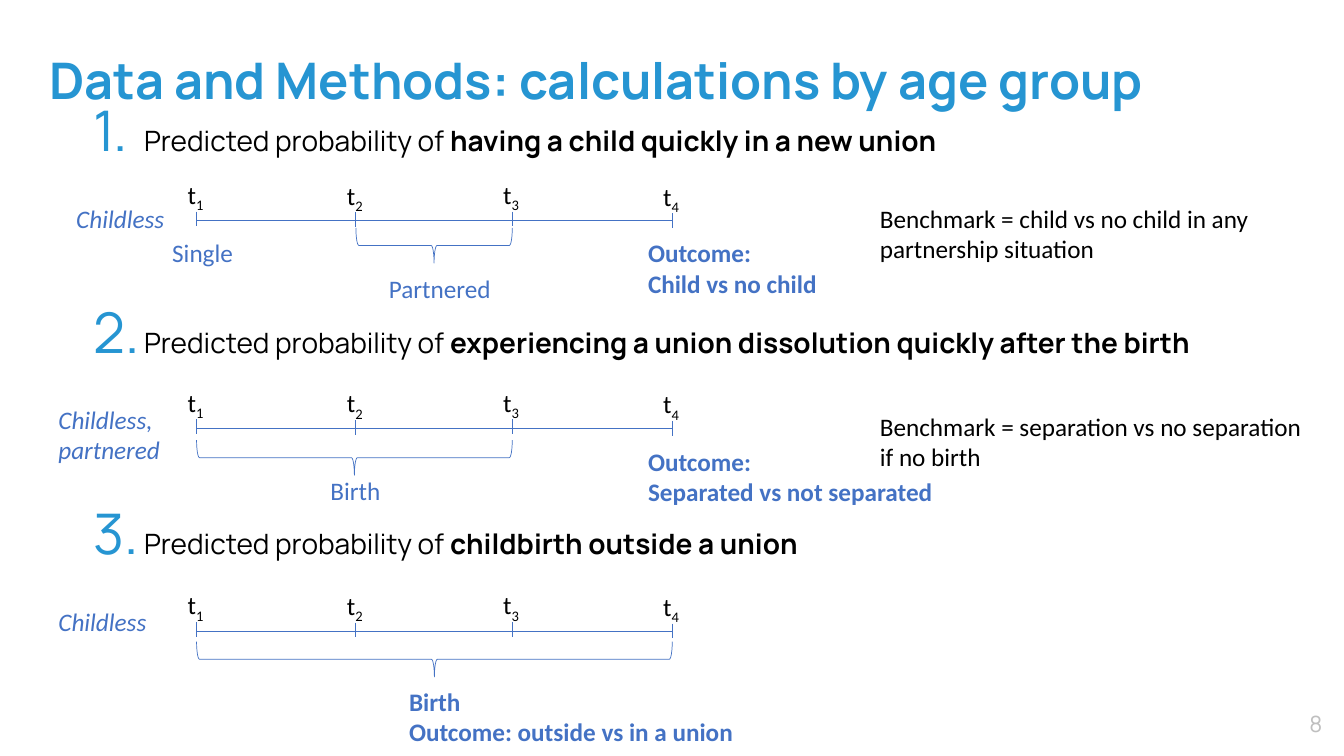
from dataclasses import dataclass

from lxml import etree
from pptx import Presentation
from pptx.dml.color import RGBColor
from pptx.enum import shapes, text
from pptx.oxml import ns
from pptx.util import Pt

SKY = RGBColor(0x26, 0x95, 0xD2)
BLUE = RGBColor(0x44, 0x72, 0xC4)
BLACK = RGBColor(0, 0, 0)
GREY = RGBColor(0xBF, 0xBF, 0xBF)

AXIS_LEFT = 140.4
TICKS = [(0, 0), (113.8, 0.5), (225.5, 0), (339.8, 1.2)]
BRACE_DEPTH = 25.2
HEADING_TOP, HEADING_PITCH = 84.4, 144.2


@dataclass
class Label:
    words: str
    left: float
    top: float
    width: float
    color: RGBColor = BLUE
    bold: bool = False
    italic: bool = False


@dataclass
class Scenario:
    topic: str
    axis: float
    brace: tuple
    labels: list


SCENARIOS = [
    Scenario("having a child quickly in a new union", 157.7, (1, 2, 17.6), [
        Label("Childless", -93, -16, 79.2, italic=True),
        Label("Single", -24.5, 8, 58.3),
        Label("Partnered", 130.3, 33.8, 87.8),
        Label("Outcome:\nChild vs no child", 315.4, 8.6, 136, bold=True),
        Label("Benchmark = child vs no child in any\npartnership situation",
              481, -16, 285, BLACK),
    ]),
    Scenario("experiencing a union dissolution quickly after the birth", 306, (0, 2, 20.9), [
        Label("Childless,\npartnered", -105.8, -20.9, 87.8, italic=True),
        Label("Birth", 88.6, 30.2, 50.4),
        Label("Outcome:\nSeparated vs not separated", 315.4, 9.4, 219.6, bold=True),
        Label("Benchmark = separation vs no separation\nif no birth",
              481, -16, 323.3, BLACK),
    ]),
    Scenario("childbirth outside a union", 450.7, (0, 3, 20.2), [
        Label("Childless", -105.8, -20.9, 77.8, italic=True),
        Label("Birth\nOutcome: outside vs in a union", 144.7, 36, 247.7, bold=True),
    ]),
]


def set_font(para, name, size, color):
    para.font.name = name
    para.font.size = Pt(size)
    para.font.color.rgb = color


def draw_line(page, x1, y1, x2, y2):
    line = page.shapes.add_connector(
        shapes.MSO_CONNECTOR.STRAIGHT, Pt(x1), Pt(y1), Pt(x2), Pt(y2))
    line.line.color.rgb = BLUE
    line.line.width = Pt(0.5)
    etree.SubElement(line._element.spPr, ns.qn("a:effectLst"))


def add_label_box(page, left, top, width, height):
    box = page.shapes.add_textbox(Pt(left), Pt(top), Pt(width), Pt(height))
    box.text_frame.word_wrap = False
    box.text_frame.auto_size = text.MSO_AUTO_SIZE.SHAPE_TO_FIT_TEXT
    return box


def draw_label(page, left, top, label):
    height = 28.8 + 22.3 * label.words.count("\n")
    box = add_label_box(page, left + label.left, top + label.top, label.width, height)
    box.text_frame.text = label.words
    for para in box.text_frame.paragraphs:
        set_font(para, "Calibri", 18, label.color)
        para.font.bold = label.bold
        para.font.italic = label.italic


def draw_time_mark(page, x, y, number):
    draw_line(page, x, y - 6.5, x, y + 4)
    box = add_label_box(page, x - 13.5, y - 33.1, 26.6, 28.8)
    para = box.text_frame.paragraphs[0]
    para.add_run().text = "t"
    subscript = para.add_run()
    subscript.text = str(number)
    subscript._r.get_or_add_rPr().set("baseline", "-25000")
    set_font(para, "Calibri", 18, BLACK)


def draw_brace(page, left, top, first, last, drop):
    start, end = TICKS[first][0], TICKS[last][0]
    length = end - start
    brace = page.shapes.add_shape(
        shapes.MSO_SHAPE.LEFT_BRACE,
        Pt(left + (start + end - BRACE_DEPTH) / 2), Pt(top + drop - length / 2),
        Pt(BRACE_DEPTH), Pt(length))
    brace.rotation = 270
    brace.shadow.inherit = False
    brace.fill.background()
    brace.line.color.rgb = BLUE
    brace.line.width = Pt(0.5)


def draw_timeline(page, left, top, scenario):
    draw_line(page, left, top, left + TICKS[-1][0], top)
    for number, (offset, drop) in enumerate(TICKS, 1):
        draw_time_mark(page, left + offset, top + drop, number)
    draw_brace(page, left, top, *scenario.brace)
    for label in scenario.labels:
        draw_label(page, left, top, label)


def draw_heading(page, left, top, number, topic):
    box = page.shapes.add_textbox(Pt(left), Pt(top), Pt(864), Pt(34.5))
    box.text_frame.word_wrap = True
    para = box.text_frame.paragraphs[0]
    properties = para._p.get_or_add_pPr()
    properties.set("marL", str(Pt(36)))
    properties.set("indent", str(Pt(-36)))
    color = etree.SubElement(properties, ns.qn("a:buClr"))
    etree.SubElement(color, ns.qn("a:srgbClr"), val=str(SKY))
    etree.SubElement(properties, ns.qn("a:buSzPct"), val="200000")
    etree.SubElement(properties, ns.qn("a:buFont"), typeface="+mj-lt")
    etree.SubElement(properties, ns.qn("a:buAutoNum"),
                     type="arabicPeriod", startAt=str(number))
    set_font(para, "Manrope", 20, BLACK)
    para.add_run().text = "Predicted probability of "
    span = para.add_run()
    span.text = topic
    span.font.bold = True


def draw_title(page, left, top, width, height):
    title = page.shapes.title
    title.left, title.top, title.width, title.height = map(Pt, (left, top, width, height))
    title.text_frame.text = "Data and Methods: calculations by age group"
    title.text_frame.vertical_anchor = text.MSO_ANCHOR.MIDDLE
    para = title.text_frame.paragraphs[0]
    para.alignment = text.PP_ALIGN.LEFT
    para.line_spacing = 0.9
    set_font(para, "Manrope", 36, SKY)
    para.font.bold = True


def draw_page_number(page, left, top, width, height):
    table = page.shapes.add_table(1, 1, Pt(left), Pt(top), Pt(width), Pt(height)).table
    table.first_row = table.horz_banding = False
    cell = table.cell(0, 0)
    cell.fill.background()
    cell.margin_left = cell.margin_right = cell.margin_top = cell.margin_bottom = 0
    cell.vertical_anchor = text.MSO_ANCHOR.MIDDLE
    cell.text = "8"
    para = cell.text_frame.paragraphs[0]
    para.alignment = text.PP_ALIGN.RIGHT
    set_font(para, "Manrope", 16, GREY)


def main():
    deck = Presentation()
    deck.slide_width, deck.slide_height = Pt(960), Pt(540)
    page = deck.slides.add_slide(deck.slide_layouts.get_by_name("Title Only"))
    draw_title(page, 28, 14.4, 907, 90.7)
    draw_page_number(page, 14.4, 506.2, 930.2, 14.4)
    for index, scenario in enumerate(SCENARIOS):
        draw_heading(page, 59.8, HEADING_TOP + index * HEADING_PITCH,
                     index + 1, scenario.topic)
        draw_timeline(page, AXIS_LEFT, scenario.axis, scenario)
    deck.save("out.pptx")


if __name__ == "__main__":
    main()
